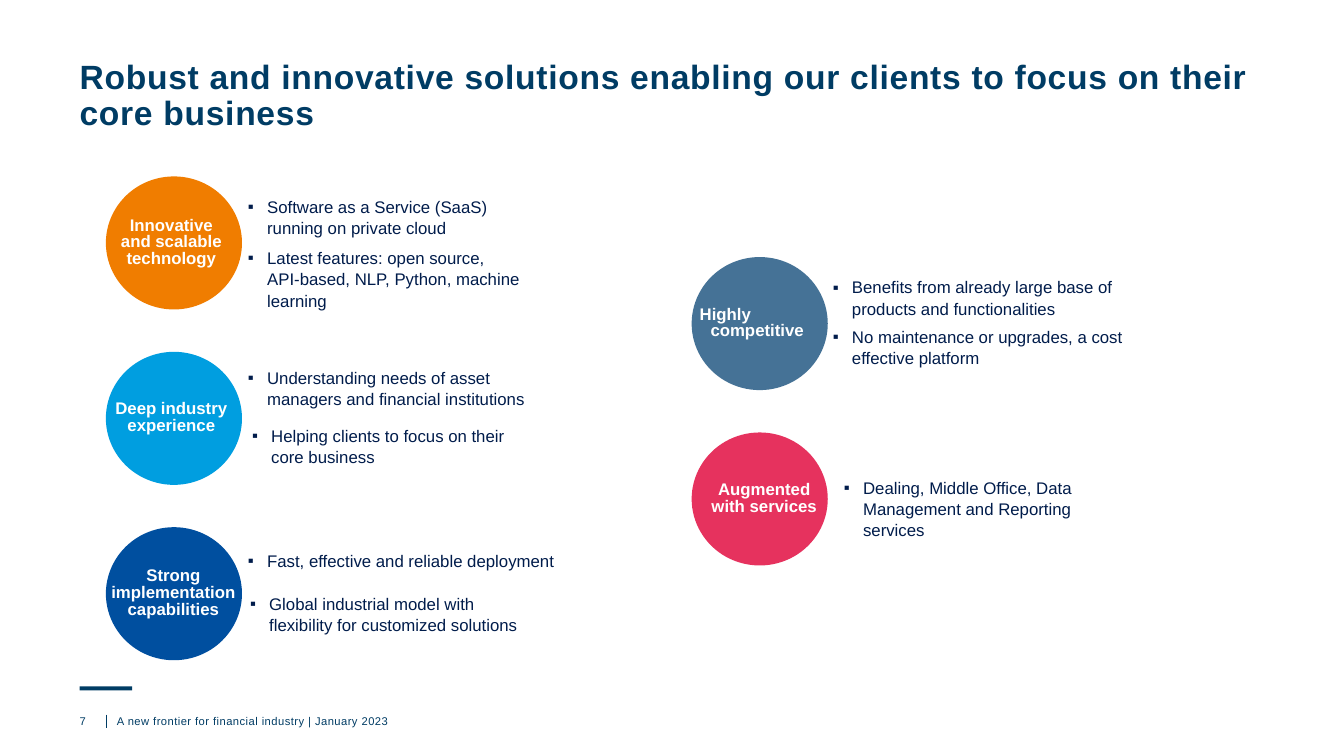
import pptx
import pptx.util
import pptx.dml.color
import pptx.enum.shapes
import pptx.enum.text
import pptx.oxml
import pptx.oxml.ns

RGBColor = pptx.dml.color.RGBColor
Inches = pptx.util.Inches
Pt = pptx.util.Pt
SHAPE = pptx.enum.shapes.MSO_SHAPE
ALIGN = pptx.enum.text.PP_ALIGN
ANCHOR = pptx.enum.text.MSO_ANCHOR

NAVY = RGBColor(0x00, 0x3C, 0x64)
INK = RGBColor(0x00, 0x1C, 0x4B)
WHITE = RGBColor(0xFF, 0xFF, 0xFF)
ORANGE = RGBColor(0xF0, 0x7D, 0x00)
SKY = RGBColor(0x00, 0x9E, 0xE0)
BLUE = RGBColor(0x00, 0x4F, 0x9F)
STEEL = RGBColor(0x45, 0x72, 0x96)
PINK = RGBColor(0xE6, 0x32, 0x5E)

MARGIN = 0.79
FOOTER_TOP = 7.09
COLUMNS = {"left": (1.05, 1.75), "right": (6.86, 2.55)}
ROW_PITCH = 1.74
CIRCLE_W, CIRCLE_H = 1.35, 1.32
LABEL_H = 0.64

TITLE = {"size": Pt(24), "bold": True, "name": "Arial"}
LABEL = {"size": Pt(12), "bold": True, "name": "Arial"}
BODY = {"size": Pt(12), "bold": False, "name": "Arial"}
FOOTER = {"size": Pt(8), "bold": False, "name": "Arial"}

# column, row, colour, label, label (dx, width), bullets (dx, dy, width, height, text)
SOLUTIONS = [
    ("left", 0, ORANGE, "Innovative and scalable technology", (0.08, 1.14), [
        (1.41, 0.19, 3.06, 0.45, "Software as a Service (SaaS)\vrunning on private cloud"),
        (1.41, 0.70, 3.06, 0.44,
         "Latest features: open source,\vAPI-based, NLP, Python, machine learning")]),
    ("left", 1, SKY, "Deep industry experience", (0.08, 1.14), [
        (1.41, 0.15, 3.06, 0.45, "Understanding needs of asset managers and financial institutions"),
        (1.45, 0.72, 2.63, 0.44, "Helping clients to focus on their core business")]),
    ("left", 2, BLUE, "Strong implementation capabilities", (0.04, 1.26), [
        (1.41, 0.22, 3.06, 0.33, "Fast, effective and reliable deployment"),
        (1.43, 0.65, 2.90, 0.60,
         "Global industrial model with flexibility for customized solutions")]),
    ("right", 0, STEEL, "Highly\ncompetitive", (0.08, 1.14), [
        (1.40, 0.19, 2.89, 0.45, "Benefits from already large base of products and functionalities"),
        (1.40, 0.68, 2.89, 0.44, "No maintenance or upgrades, a cost effective platform")]),
    ("right", 1, PINK, "Augmented with services", (0.15, 1.14), [
        (1.51, 0.44, 2.89, 0.61,
         "Dealing, Middle Office, Data Management and Reporting services")]),
]


def set_frame(tf, text, font, color, anchor=ANCHOR.TOP, align=ALIGN.LEFT, spacing=1.0):
    """Fill a text frame and format its paragraphs."""
    frame = {"word_wrap": True, "auto_size": pptx.enum.text.MSO_AUTO_SIZE.NONE,
             "vertical_anchor": anchor, "margin_left": 0, "margin_top": 0,
             "margin_right": 0, "margin_bottom": 0}
    for key, value in frame.items():
        setattr(tf, key, value)
    tf.text = text
    for p in tf.paragraphs:
        p.alignment, p.line_spacing = align, spacing
        for r in p.runs:
            for key, value in font.items():
                setattr(r.font, key, value)
            r.font.color.rgb = color
    return tf


def set_tracking(tf, points):
    """Space out the letters of every run."""
    for p in tf.paragraphs:
        for r in p.runs:
            r.font._element.set("spc", str(int(points * 100)))


def add_text(slide, x, y, w, h, text, font, color, **layout):
    """Add a text box and return its frame."""
    sp = slide.shapes.add_textbox(Inches(x), Inches(y), Inches(w), Inches(h))
    return set_frame(sp.text_frame, text, font, color, **layout)


def add_shape(slide, kind, x, y, w, h, color):
    """Add a plain filled shape."""
    sp = slide.shapes.add_shape(kind, Inches(x), Inches(y), Inches(w), Inches(h))
    sp.shadow.inherit = False
    sp.fill.solid()
    sp.fill.fore_color.rgb = color
    sp.line.fill.background()


def add_bullet(slide, x, y, w, h, text):
    """Add a text box with one square-bulleted paragraph."""
    tf = add_text(slide, x, y, w, h, text, BODY, INK, spacing=1.05)
    pPr = tf.paragraphs[0]._p.get_or_add_pPr()
    pPr.set("marL", str(Inches(0.19)))
    pPr.set("indent", str(-Inches(0.19)))
    for xml in ('<a:buFont %s typeface="Arial"/>', '<a:buChar %s char="▪"/>'):
        pPr.append(pptx.oxml.parse_xml(xml % pptx.oxml.ns.nsdecls("a")))


def add_solution(slide, column, row, color, label, label_box, bullets):
    """Add a circle with its label and the bullets beside it."""
    x, top = COLUMNS[column]
    y = top + row * ROW_PITCH
    dx, width = label_box
    add_shape(slide, SHAPE.OVAL, x, y, CIRCLE_W, CIRCLE_H, color)
    tf = add_text(slide, x + dx, y + (CIRCLE_H - LABEL_H) / 2, width, LABEL_H, label, LABEL,
                  WHITE, anchor=ANCHOR.MIDDLE, align=ALIGN.CENTER, spacing=Pt(12))
    if len(tf.paragraphs) > 1:
        tf.paragraphs[0].alignment = ALIGN.LEFT
    for bx, by, w, h, text in bullets:
        add_bullet(slide, x + bx, y + by, w, h, text)


def add_title(slide, text):
    """Place and format the title placeholder."""
    sp = slide.shapes.title
    box = {"left": MARGIN, "top": 0.6, "width": 11.71, "height": 0.84}
    for key, value in box.items():
        setattr(sp, key, Inches(value))
    set_tracking(set_frame(sp.text_frame, text, TITLE, NAVY, spacing=0.9), 0.5)


def add_footer(slide, number, text):
    """Add the accent bar, page number, divider and footer text."""
    add_shape(slide, SHAPE.RECTANGLE, MARGIN, 6.81, 0.52, 0.04, NAVY)
    line = slide.shapes.add_connector(
        pptx.enum.shapes.MSO_CONNECTOR.STRAIGHT,
        Inches(1.05), Inches(FOOTER_TOP), Inches(1.05), Inches(7.22))
    line.line.color.rgb, line.line.width = NAVY, Pt(0.5)
    line._element.spPr.append(
        pptx.oxml.parse_xml("<a:effectLst %s/>" % pptx.oxml.ns.nsdecls("a")))
    add_text(slide, MARGIN, FOOTER_TOP, 0.26, 0.2, number, FOOTER, NAVY)
    set_tracking(add_text(slide, 1.16, FOOTER_TOP, 7.6, 0.2, text, FOOTER, NAVY), 0.3)


def main():
    """Build the slide and save it."""
    prs = pptx.Presentation()
    prs.slide_width, prs.slide_height = Inches(13.33), Inches(7.5)
    slide = prs.slides.add_slide(prs.slide_layouts[5])
    add_title(slide, "Robust and innovative solutions enabling our clients "
                     "to focus on their core business")
    add_footer(slide, "7", "A new frontier for financial industry | January 2023")
    for solution in SOLUTIONS:
        add_solution(slide, *solution)
    prs.save("out.pptx")


if __name__ == "__main__":
    main()
